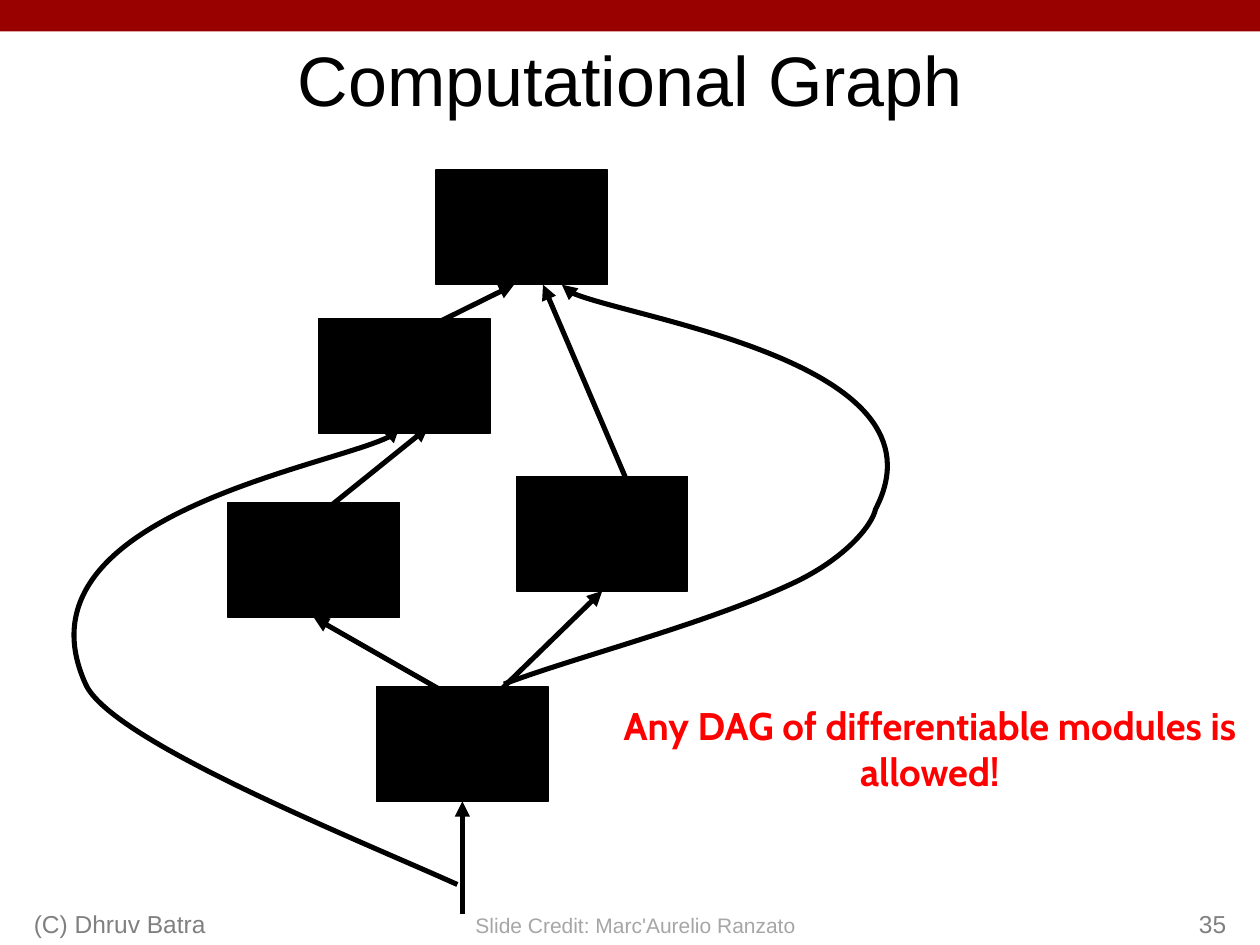
"""Build the Computational Graph slide."""
from lxml.etree import SubElement
from pptx import Presentation
from pptx.dml.color import RGBColor
from pptx.enum.shapes import MSO_CONNECTOR, MSO_SHAPE
from pptx.enum.text import MSO_ANCHOR, PP_ALIGN
from pptx.oxml.ns import qn
from pptx.util import Pt

PX = 9144
COLORS = {"bar": "990000", "ink": "000000", "note": "FF0000", "credit": "A6A6A6", "footer": "808080"}


def style_arrow(arrow):
    arrow.line.color.rgb = RGBColor.from_string(COLORS["ink"])
    arrow.line.width = Pt(2.89)
    SubElement(arrow.line._get_or_add_ln(), qn("a:tailEnd"), type="triangle")
    SubElement(arrow._element.spPr, qn("a:effectLst"))


def write_text(box, text, size, color, align, anchor, font="Arial", bold=False):
    frame = box.text_frame
    frame.text = text
    frame.word_wrap = True
    frame.vertical_anchor = anchor
    para = frame.paragraphs[0]
    para.alignment = align
    span = para.runs[0]
    span.font.name = font
    span.font.size = Pt(size)
    span.font.bold = bold
    span.font.color.rgb = RGBColor.from_string(COLORS[color])


deck = Presentation()
deck.slide_width, deck.slide_height = 1000 * PX, 750 * PX
page = deck.slides.add_slide(deck.slide_layouts[5])
shapes = page.shapes

title = shapes.title
title.left, title.top, title.width, title.height = 75 * PX, 25 * PX, 850 * PX, 75 * PX
write_text(title, "Computational Graph", 40, "ink", PP_ALIGN.CENTER, MSO_ANCHOR.MIDDLE)

rectangles = {
    "bar": (0, 0, 1000, 25),
    "left": (181, 399, 136, 91),
    "right": (410, 378, 136, 91),
    "input": (299, 545, 136, 91),
    "merge": (253, 253, 136, 91),
    "output": (346, 135, 136, 91),
}
modules = {}
for name, bounds in rectangles.items():
    module = shapes.add_shape(MSO_SHAPE.RECTANGLE, *(value * PX for value in bounds))
    module.shadow.inherit = False
    module.fill.solid()
    module.fill.fore_color.rgb = RGBColor.from_string(COLORS["bar" if name == "bar" else "ink"])
    if name == "bar":
        module.line.fill.background()
    else:
        module.line.color.rgb = RGBColor.from_string(COLORS["ink"])
        module.line.width = Pt(0.75)
    modules[name] = module

arrows = [
    ((367, 725), (367, 636), "input"),
    ((368, 558), (249, 490), "left"),
    ((499, 385), (431, 226), None),
    ((317, 271), (408, 226), None),
    ((363, 581), (478, 469), "right"),
    ((227, 430), (340, 339), None),
]
for start, end, target in arrows:
    arrow = shapes.add_connector(MSO_CONNECTOR.STRAIGHT, *(value * PX for value in start + end))
    if target:
        arrow.end_connect(modules[target], 2)
    style_arrow(arrow)

curves = [
    [(363, 702), (283, 666), (88, 588), (68, 543), (7, 409), (323, 360), (317, 339)],
    [(400, 543), (455, 522), (558, 496), (627, 464), (669, 445), (692, 418), (695, 404),
     (756, 287), (441, 244), (446, 226)],
]
for start, *controls in curves:
    builder = shapes.build_freeform(*start, scale=PX)
    builder.add_line_segments(controls, close=False)
    curve = builder.convert_to_shape()
    curve.fill.background()
    outline = next(curve._element.iter(qn("a:path")))
    segments = outline.findall(qn("a:lnTo"))
    for first in range(0, len(segments), 3):
        bezier = SubElement(outline, qn("a:cubicBezTo"))
        for segment in segments[first:first + 3]:
            bezier.append(segment[0])
            outline.remove(segment)
    style_arrow(curve)

texts = [
    ((476, 552, 524, 86), "Any DAG of differentiable modules is allowed!", 22, "note",
     PP_ALIGN.CENTER, MSO_ANCHOR.TOP, "Cabin", True),
    ((366, 719, 277, 30), "Slide Credit: Marc'Aurelio Ranzato", 12, "credit", PP_ALIGN.CENTER, MSO_ANCHOR.TOP),
    ((17, 700, 317, 50), "(C) Dhruv Batra", 14, "footer", PP_ALIGN.LEFT, MSO_ANCHOR.BOTTOM),
    ((775, 700, 208, 50), "35", 14, "footer", PP_ALIGN.RIGHT, MSO_ANCHOR.BOTTOM),
]
for bounds, *content in texts:
    write_text(shapes.add_textbox(*(value * PX for value in bounds)), *content)

deck.save("out.pptx")
